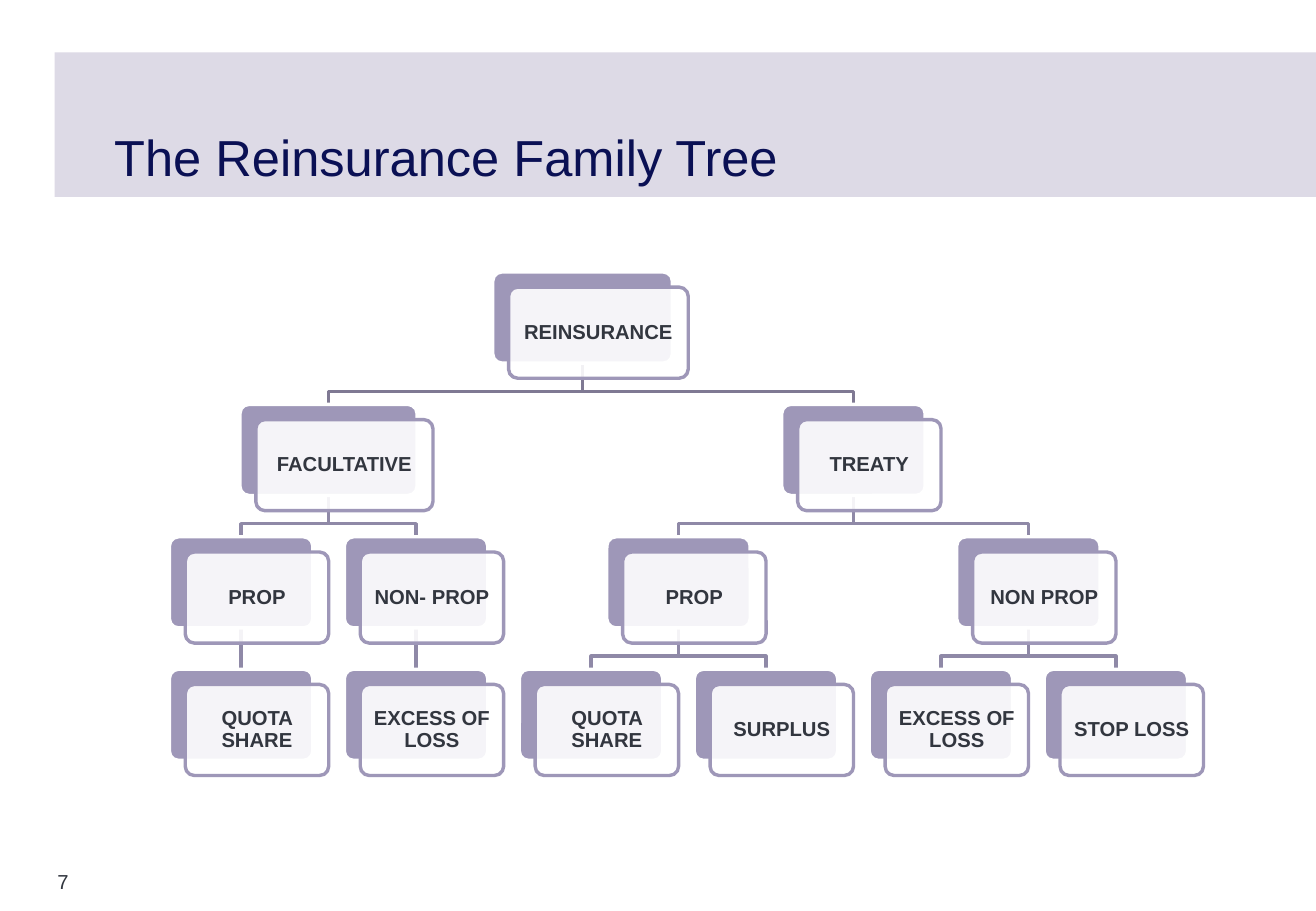
from dataclasses import dataclass

from lxml.etree import SubElement
from pptx import Presentation
from pptx.dml.color import RGBColor
from pptx.enum.shapes import MSO_CONNECTOR, MSO_SHAPE
from pptx.enum.text import MSO_ANCHOR, PP_ALIGN
from pptx.oxml.ns import qn
from pptx.util import Pt

WHITE = RGBColor(0xFF, 0xFF, 0xFF)
BAND = RGBColor(0xDD, 0xDA, 0xE6)
NAVY = RGBColor(0x0A, 0x10, 0x54)
DARK = RGBColor(0x32, 0x36, 0x3F)
CARD = RGBColor(0x9E, 0x97, 0xB8)
ROOT_LINK = RGBColor(0x7F, 0x79, 0x93)
LINK = RGBColor(0x8F, 0x89, 0xA7)

TITLE_FONT = {"name": "Arial", "size": Pt(30)}
NUMBER_FONT = {"name": "Arial", "size": Pt(12)}
CARD_FONT = {"name": "Arial", "size": Pt(12), "bold": True}

CARD_WIDTH, CARD_HEIGHT = 85, 54
LEAF_STEP, LEVEL_STEP = 103.7, 78.5
FRONT_SHIFT_X, FRONT_SHIFT_Y = 9.4, 9
LINK_DROP = 16.8
LINE_WIDTH = 2


@dataclass
class Node:
    label: str
    children: tuple = ()
    width: float = CARD_WIDTH
    center: float = 0
    top: float = 0


def reinsurance_tree():
    facultative = Node("FACULTATIVE", (
        Node("PROP", (Node("QUOTA SHARE"),)),
        Node("NON- PROP", (Node("EXCESS OF LOSS"),)),
    ), 105)
    treaty = Node("TREATY", (
        Node("PROP", (Node("QUOTA SHARE"), Node("SURPLUS"))),
        Node("NON PROP", (Node("EXCESS OF LOSS"), Node("STOP LOSS"))),
    ))
    return Node("REINSURANCE", (facultative, treaty), 106.5)


def write(shape, text, font, color, anchor, align=PP_ALIGN.LEFT, inset=0):
    frame = shape.text_frame
    settings = {"word_wrap": True, "vertical_anchor": anchor}
    for side in ("left", "top", "right", "bottom"):
        settings[f"margin_{side}"] = Pt(inset)
    for name, value in settings.items():
        setattr(frame, name, value)
    paragraph = frame.paragraphs[0]
    paragraph.text = text
    paragraph.alignment = align
    for name, value in font.items():
        setattr(paragraph.font, name, value)
    paragraph.font.color.rgb = color
    return paragraph


def add_header(slide, left, top, width, height):
    # Tinted band running to the right edge
    band = slide.shapes.add_shape(
        MSO_SHAPE.RECTANGLE, Pt(left), Pt(top), Pt(width), Pt(height))
    band.shadow.inherit = False
    band.fill.solid()
    band.fill.fore_color.rgb = BAND
    band.line.fill.background()
    # Title, resting near the foot of the band
    title = slide.shapes.add_textbox(
        Pt(left + 35.3), Pt(top + 12.2), Pt(646.5), Pt(67.7))
    write(title, "The Reinsurance Family Tree", TITLE_FONT, NAVY, MSO_ANCHOR.BOTTOM)


def add_page_number(slide, left, top, width, height):
    number = slide.shapes.add_textbox(Pt(left), Pt(top), Pt(width), Pt(height))
    write(number, "7", NUMBER_FONT, DARK, MSO_ANCHOR.TOP)


def arrange(node, top, leaf_centers):
    """Center each parent between the outer edges of its children."""
    node.top = top
    for child in node.children:
        arrange(child, top + LEVEL_STEP, leaf_centers)
    if node.children:
        first, last = node.children[0], node.children[-1]
        node.center = (first.center - first.width / 2 + last.center + last.width / 2) / 2
    else:
        node.center = next(leaf_centers)


def walk(node):
    yield node
    for child in node.children:
        yield from walk(child)


def add_link(slide, parent, child, color):
    start = Pt(parent.center), Pt(parent.top + CARD_HEIGHT)
    end = Pt(child.center), Pt(child.top)
    if len(parent.children) == 1:
        link = slide.shapes.add_connector(MSO_CONNECTOR.STRAIGHT, *start, *end)
        SubElement(link._element.spPr, qn("a:effectLst"))
    else:
        bend = start[1] + Pt(LINK_DROP)
        builder = slide.shapes.build_freeform(*start)
        builder.add_line_segments([(start[0], bend), (end[0], bend), end], close=False)
        link = builder.convert_to_shape()
        link.shadow.inherit = False
        link.fill.background()
    link.line.color.rgb = color
    link.line.width = Pt(LINE_WIDTH)


def add_panel(slide, left, top, width, fill, line):
    panel = slide.shapes.add_shape(
        MSO_SHAPE.ROUNDED_RECTANGLE, Pt(left), Pt(top), Pt(width), Pt(CARD_HEIGHT))
    panel.adjustments[0] = 0.1
    panel.shadow.inherit = False
    panel.fill.solid()
    panel.fill.fore_color.rgb = fill
    panel.line.color.rgb = line
    panel.line.width = Pt(LINE_WIDTH)
    return panel


def add_card(slide, node):
    left = node.center - node.width / 2
    add_panel(slide, left, node.top, node.width, CARD, WHITE)
    front = add_panel(slide, left + FRONT_SHIFT_X, node.top + FRONT_SHIFT_Y,
                      node.width, WHITE, CARD)
    # Let the back panel show through
    color = front._element.spPr.find(qn("a:solidFill"))[0]
    SubElement(color, qn("a:alpha"), val="90000")
    paragraph = write(front, node.label, CARD_FONT, DARK, MSO_ANCHOR.MIDDLE,
                      PP_ALIGN.CENTER, 3.6)
    paragraph.line_spacing = 0.9


def add_tree(slide, left, top, root):
    leaves = [node for node in walk(root) if not node.children]
    arrange(root, top, iter(
        [left + CARD_WIDTH / 2 + LEAF_STEP * index for index in range(len(leaves))]))
    # Links lie behind all cards
    for node in walk(root):
        for child in node.children:
            add_link(slide, node, child, ROOT_LINK if node is root else LINK)
    for node in walk(root):
        add_card(slide, node)


def main():
    presentation = Presentation()
    presentation.slide_width, presentation.slide_height = Pt(780), Pt(540)
    slide = presentation.slides.add_slide(presentation.slide_layouts[6])
    add_header(slide, 32.4, 31, 747.6, 85.7)
    add_page_number(slide, 34, 515.5, 28, 18.7)
    add_tree(slide, 100.4, 161.2, reinsurance_tree())
    presentation.save("out.pptx")


if __name__ == "__main__":
    main()
